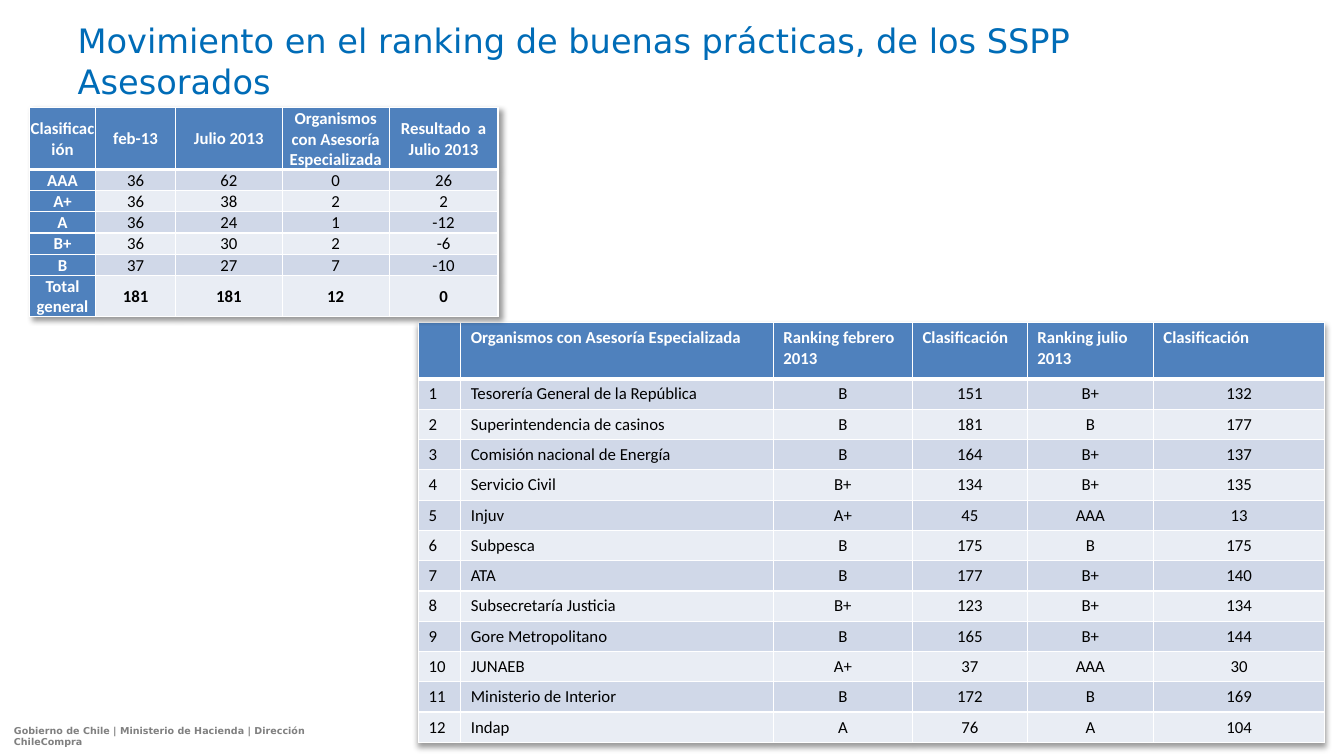
"""Build the slide comparing the good-practice ranking of advised public services."""
from dataclasses import dataclass

from lxml.etree import SubElement
from pptx import Presentation
from pptx.dml.color import RGBColor
from pptx.enum.text import MSO_ANCHOR, MSO_AUTO_SIZE, PP_ALIGN
from pptx.oxml import parse_xml
from pptx.oxml.ns import nsdecls, qn
from pptx.util import Inches, Pt

WHITE, BLACK, BLUE = "FFFFFF", "000000", "4F81BD"
BANDS = ("D0D8E8", "E9EDF4")
BODY = {"name": "Calibri", "size": Pt(12), "bold": False}
STRONG = {**BODY, "bold": True}
TITLE = {"name": "DejaVu Sans", "size": Pt(24), "bold": False}
FOOTER = {"name": "DejaVu Sans", "size": Pt(6.8), "bold": True}
COMPACT = {
    "vertical_anchor": MSO_ANCHOR.MIDDLE,
    "margin_left": Inches(0.01),
    "margin_top": Inches(0.01),
    "margin_right": Inches(0.01),
    "margin_bottom": 0,
}


@dataclass
class RankingTable:
    left: float
    top: float
    widths: list[float]
    heights: list[float]
    rows: list[tuple[str, ...]]
    cell_format: dict
    left_columns: int
    left_header: bool
    label_column: bool
    total_row: bool
    shadow_angle: int


ORGANISMS = RankingTable(
    4.15, 3.2, [0.42, 3.1, 1.38, 1.14, 1.25, 1.7], [0.56] + [0.3] * 12,
    [
        ("", "Organismos con Asesoría Especializada", "Ranking febrero 2013",
         "Clasificación", "Ranking julio 2013", "Clasificación"),
        ("1", "Tesorería General de la República", "B", "151", "B+", "132"),
        ("2", "Superintendencia de casinos", "B", "181", "B", "177"),
        ("3", "Comisión nacional de Energía", "B", "164", "B+", "137"),
        ("4", "Servicio Civil", "B+", "134", "B+", "135"),
        ("5", "Injuv", "A+", "45", "AAA", "13"),
        ("6", "Subpesca", "B", "175", "B", "175"),
        ("7", "ATA", "B", "177", "B+", "140"),
        ("8", "Subsecretaría Justicia", "B+", "123", "B+", "134"),
        ("9", "Gore Metropolitano", "B", "165", "B+", "144"),
        ("10", "JUNAEB", "A+", "37", "AAA", "30"),
        ("11", "Ministerio de Interior", "B", "172", "B", "169"),
        ("12", "Indap", "A", "76", "A", "104"),
    ],
    {}, 2, True, False, False, 90,
)
SUMMARY = RankingTable(
    0.29, 1.07, [0.66, 0.79, 1.06, 1.06, 1.08], [0.61] + [0.21] * 5 + [0.41],
    [
        ("Clasificación", "feb-13", "Julio 2013",
         "Organismos con Asesoría Especializada", "Resultado  a Julio 2013"),
        ("AAA", "36", "62", "0", "26"),
        ("A+", "36", "38", "2", "2"),
        ("A", "36", "24", "1", "-12"),
        ("B+", "36", "30", "2", "-6"),
        ("B", "37", "27", "7", "-10"),
        ("Total general", "181", "181", "12", "0"),
    ],
    COMPACT, 0, False, True, True, 45,
)


def paint(target, color: str) -> None:
    if hasattr(target, "solid"):
        target.solid()
        target.fore_color.rgb = RGBColor.from_string(color)
    else:
        target.color.rgb = RGBColor.from_string(color)


def apply(target, values: dict) -> None:
    for name, value in values.items():
        setattr(target, name, value)


def write(para, text: str, font_format: dict, color: str) -> None:
    span = para.add_run()
    span.text = text
    apply(span.font, font_format)
    paint(span.font, color)


def add_borders(cell, top: int, bottom: int) -> None:
    properties = cell._tc.get_or_add_tcPr()
    widths = {"lnL": 1, "lnR": 1, "lnT": top, "lnB": bottom}
    for index, (side, width) in enumerate(widths.items()):
        line = parse_xml(f'<a:{side} {nsdecls("a")} w="{Pt(width)}"/>')
        fill = SubElement(line, qn("a:solidFill"))
        SubElement(fill, qn("a:srgbClr"), val=WHITE)
        properties.insert(index, line)


def add_shadow(table, angle: int) -> None:
    table._tbl.tblPr.insert(0, parse_xml(
        f'<a:effectLst {nsdecls("a")}>'
        f'<a:outerShdw blurRad="{Pt(4)}" dist="{Pt(3)}" dir="{angle * 60000}" algn="tl">'
        f'<a:srgbClr val="{BLACK}"><a:alpha val="40000"/></a:srgbClr>'
        '</a:outerShdw></a:effectLst>'
    ))


def add_ranking(page, ranking: RankingTable) -> None:
    table = page.shapes.add_table(
        len(ranking.rows), len(ranking.widths),
        Inches(ranking.left), Inches(ranking.top),
        Inches(sum(ranking.widths)), Inches(sum(ranking.heights)),
    ).table
    table.horz_banding = False
    add_shadow(table, ranking.shadow_angle)
    for column, width in zip(table.columns, ranking.widths):
        column.width = Inches(width)
    for row, height in zip(table.rows, ranking.heights):
        row.height = Inches(height)
    for row, texts in enumerate(ranking.rows):
        total = ranking.total_row and row == len(ranking.rows) - 1
        for column, text in enumerate(texts):
            cell = table.cell(row, column)
            heading = row == 0 or (ranking.label_column and column == 0)
            paint(cell.fill, BLUE if heading else BANDS[(row - 1) % 2])
            add_borders(cell, 3 if row == 1 else 1, 3 if row == 0 else 1)
            apply(cell, ranking.cell_format)
            para = cell.text_frame.paragraphs[0]
            to_left = column < ranking.left_columns or (row == 0 and ranking.left_header)
            para.alignment = PP_ALIGN.LEFT if to_left else PP_ALIGN.CENTER
            if text:
                write(para, text, STRONG if heading or total else BODY,
                      WHITE if heading else BLACK)


def add_title(page) -> None:
    title = page.shapes.title
    apply(title, {"left": Inches(0.67), "top": Inches(0.13),
                  "width": Inches(11.56), "height": Inches(1.1)})
    apply(title.text_frame, {
        "word_wrap": True, "auto_size": MSO_AUTO_SIZE.NONE,
        "vertical_anchor": MSO_ANCHOR.TOP, "margin_top": Inches(0.07),
    })
    para = title.text_frame.paragraphs[0]
    apply(para, {"alignment": PP_ALIGN.LEFT, "line_spacing": 1.0})
    write(para, "Movimiento en el ranking de buenas prácticas, de los SSPP Asesorados",
          TITLE, "006CB7")


def add_footer(page) -> None:
    box = page.shapes.add_textbox(Inches(0.04), Inches(7.14), Inches(3.77), Inches(0.21))
    apply(box.text_frame, {"word_wrap": False, "auto_size": MSO_AUTO_SIZE.SHAPE_TO_FIT_TEXT})
    write(box.text_frame.paragraphs[0],
          "Gobierno de Chile | Ministerio de Hacienda | Dirección ChileCompra",
          FOOTER, "808080")


def main() -> None:
    deck = Presentation()
    apply(deck, {"slide_width": Inches(13.33), "slide_height": Inches(7.5)})
    page = deck.slides.add_slide(deck.slide_layouts[5])
    add_footer(page)
    add_title(page)
    for ranking in (ORGANISMS, SUMMARY):
        add_ranking(page, ranking)
    deck.save("out.pptx")


if __name__ == "__main__":
    main()
